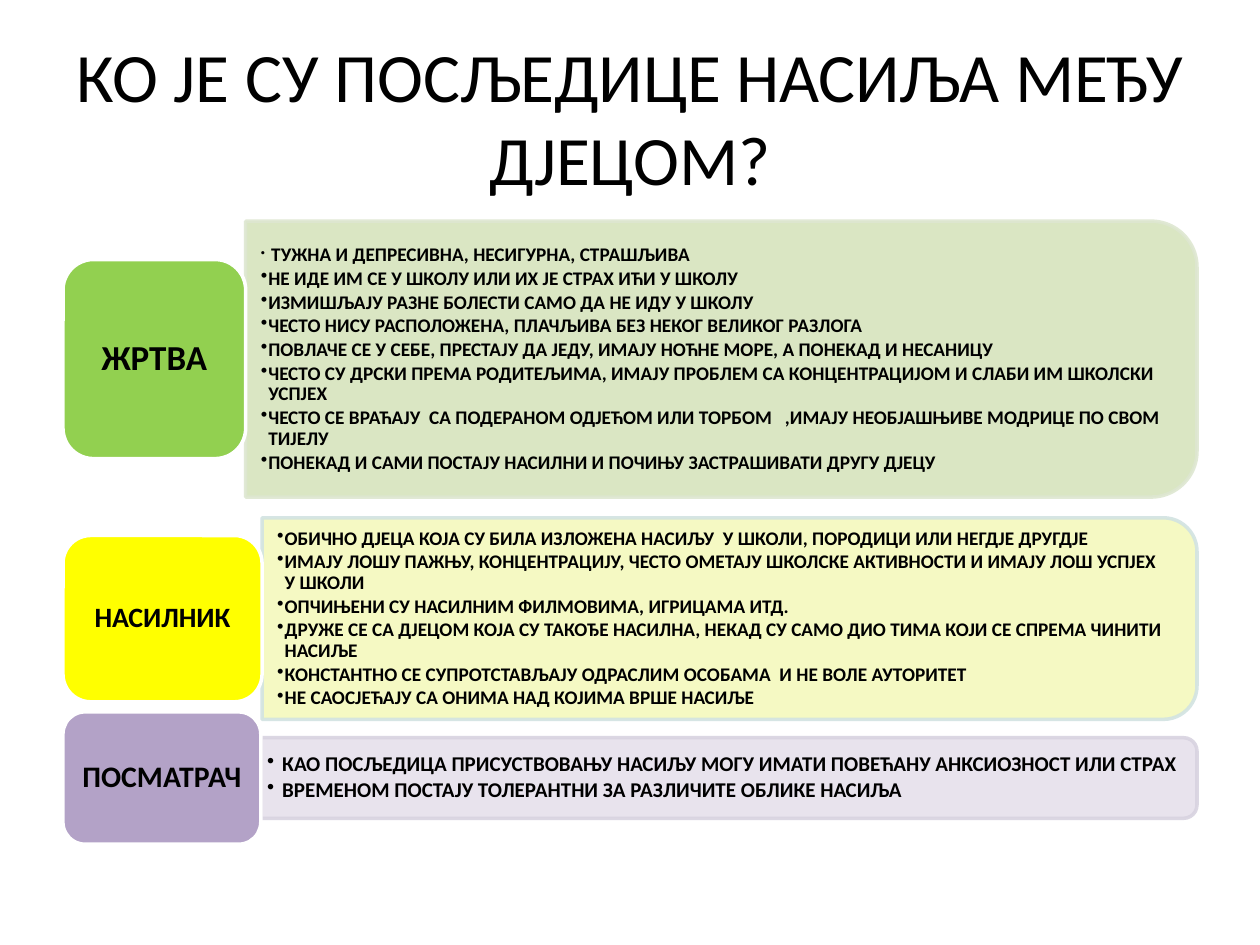
from dataclasses import dataclass
from typing import Optional

from lxml.etree import SubElement
from pptx import Presentation
from pptx.dml.color import RGBColor
from pptx.enum.shapes import MSO_SHAPE
from pptx.enum.text import MSO_ANCHOR, MSO_AUTO_SIZE, PP_ALIGN
from pptx.oxml.ns import qn
from pptx.util import Inches, Pt

COLUMNS, ROWS = 100, 75
CELL = Inches(0.1)
LABEL_LEFT = 5
PANEL_RIGHT = 95
OPACITY = 90
CORNER_SHARE = 1 / 6
CORNER_TEXT_SHARE = 0.29

COLORS = {
    "text": "000000",
    "label line": "FFFFFF",
    "victim label": "92D050",
    "victim panel": "D7E4BD",
    "victim line": "DEE7D1",
    "bully label": "FFFF00",
    "bully panel": "F5F9BD",
    "bully line": "D2E3E2",
    "observer label": "B3A2C7",
    "observer panel": "E6E0EC",
    "observer line": "D8D3E0",
}


@dataclass(frozen=True)
class Box:
    left: float
    top: float
    width: float
    height: float

    def lengths(self):
        return [round(cells * CELL) for cells in (self.left, self.top, self.width, self.height)]


@dataclass(frozen=True)
class Role:
    key: str
    name: str
    name_size: float
    label_top: float
    label_width: float
    label_height: float
    panel_height: float
    list_size: float
    hanging: float
    margin: float
    consequences: list[str]
    lead_size: Optional[float] = None


ROLES = [
    Role("victim", "ЖРТВА", 20, 20.6, 14.5, 15.8, 21.9, 11, 0.06, 0.12, [
        "ТУЖНА И ДЕПРЕСИВНА, НЕСИГУРНА, СТРАШЉИВА",
        "НЕ ИДЕ ИМ СЕ У ШКОЛУ ИЛИ ИХ ЈЕ СТРАХ ИЋИ У ШКОЛУ",
        "ИЗМИШЉАЈУ РАЗНЕ БОЛЕСТИ САМО ДА НЕ ИДУ У ШКОЛУ",
        "ЧЕСТО НИСУ РАСПОЛОЖЕНА, ПЛАЧЉИВА БЕЗ НЕКОГ ВЕЛИКОГ РАЗЛОГА",
        "ПОВЛАЧЕ СЕ У СЕБЕ, ПРЕСТАЈУ ДА ЈЕДУ, ИМАЈУ НОЋНЕ МОРЕ, А ПОНЕКАД И НЕСАНИЦУ",
        "ЧЕСТО СУ ДРСКИ ПРЕМА РОДИТЕЉИМА, ИМАЈУ ПРОБЛЕМ СА КОНЦЕНТРАЦИЈОМ И СЛАБИ ИМ ШКОЛСКИ УСПЈЕХ",
        "ЧЕСТО СЕ ВРАЋАЈУ  СА ПОДЕРАНОМ ОДЈЕЋОМ ИЛИ ТОРБОМ   ,ИМАЈУ НЕОБЈАШЊИВЕ МОДРИЦЕ ПО СВОМ ТИЈЕЛУ",
        "ПОНЕКАД И САМИ ПОСТАЈУ НАСИЛНИ И ПОЧИЊУ ЗАСТРАШИВАТИ ДРУГУ ДЈЕЦУ",
    ], lead_size=7),
    Role("bully", "НАСИЛНИК", 16, 42.5, 15.8, 13.2, 16, 11, 0.06, 0.12, [
        "ОБИЧНО ДЈЕЦА КОЈА СУ БИЛА ИЗЛОЖЕНА НАСИЉУ  У ШКОЛИ, ПОРОДИЦИ ИЛИ НЕГДЈЕ ДРУГДЈЕ",
        "ИМАЈУ ЛОШУ ПАЖЊУ, КОНЦЕНТРАЦИЈУ, ЧЕСТО ОМЕТАЈУ ШКОЛСКЕ АКТИВНОСТИ И ИМАЈУ ЛОШ УСПЈЕХ У ШКОЛИ",
        "ОПЧИЊЕНИ СУ НАСИЛНИМ ФИЛМОВИМА, ИГРИЦАМА ИТД.",
        "ДРУЖЕ СЕ СА ДЈЕЦОМ КОЈА СУ ТАКОЂЕ НАСИЛНА, НЕКАД СУ САМО ДИО ТИМА КОЈИ СЕ СПРЕМА ЧИНИТИ  НАСИЉЕ",
        "КОНСТАНТНО СЕ СУПРОТСТАВЉАЈУ ОДРАСЛИМ ОСОБАМА  И НЕ ВОЛЕ АУТОРИТЕТ",
        "НЕ САОСЈЕЋАЈУ СА ОНИМА НАД КОЈИМА ВРШЕ НАСИЉЕ",
    ]),
    Role("observer", "ПОСМАТРАЧ", 17, 56.5, 15.7, 10.5, 6.4, 12, 0.12, 0.05, [
        "КАО ПОСЉЕДИЦА ПРИСУСТВОВАЊУ НАСИЉУ МОГУ ИМАТИ ПОВЕЋАНУ АНКСИОЗНОСТ ИЛИ СТРАХ",
        "ВРЕМЕНОМ ПОСТАЈУ ТОЛЕРАНТНИ ЗА РАЗЛИЧИТЕ ОБЛИКЕ НАСИЉА",
    ]),
]


def add_run(paragraph, text: str, size: float, bold: bool) -> None:
    run = paragraph.add_run()
    run.text = text
    run.font.name = "Calibri"
    run.font.size = Pt(size)
    run.font.bold = bold
    run.font.color.rgb = RGBColor.from_string(COLORS["text"])


def write_text(shape, lines: list[str], *, size: float, bold: bool = True,
               align=PP_ALIGN.CENTER, margin: float = 0.07, line_spacing: float = 0.9,
               hanging: Optional[float] = None, lead_size: Optional[float] = None) -> None:
    frame = shape.text_frame
    frame.word_wrap = True
    frame.auto_size = MSO_AUTO_SIZE.NONE
    frame.vertical_anchor = MSO_ANCHOR.MIDDLE
    frame.margin_left = frame.margin_right = Inches(margin)
    frame.margin_top = frame.margin_bottom = Inches(margin / 2)
    for index, line in enumerate(lines):
        paragraph = frame.add_paragraph() if index else frame.paragraphs[0]
        paragraph.alignment = align
        paragraph.line_spacing = line_spacing
        if hanging is not None:
            paragraph.level = 1
            paragraph.space_after = Pt(0.15 * size)
            properties = paragraph._p.get_or_add_pPr()
            properties.set("marL", str(Inches(hanging)))
            properties.set("indent", str(-Inches(hanging)))
            SubElement(properties, qn("a:buChar"), char="•")
        if lead_size and index == 0:
            add_run(paragraph, " ", lead_size, False)
        add_run(paragraph, line, size, bold)


def add_block(slide, kind, box: Box, fill: str, line: str, opacity: int = 100):
    shape = slide.shapes.add_shape(kind, *box.lengths())
    shape.shadow.inherit = False
    shape.fill.solid()
    shape.fill.fore_color.rgb = RGBColor.from_string(COLORS[fill])
    shape.line.color.rgb = RGBColor.from_string(COLORS[line])
    shape.line.width = Pt(2)
    if opacity < 100:
        for color in shape._element.spPr.iter(qn("a:srgbClr")):
            SubElement(color, qn("a:alpha"), val=str(opacity * 1000))
    return shape


def add_role(slide, role: Role) -> None:
    label = Box(LABEL_LEFT, role.label_top, role.label_width, role.label_height)
    left = label.left + label.width
    width, height = PANEL_RIGHT - left, role.panel_height
    middle_x, middle_y = left + width / 2, label.top + label.height / 2

    upright = Box(middle_x - height / 2, middle_y - width / 2, height, width)
    panel = add_block(slide, MSO_SHAPE.ROUND_2_SAME_RECTANGLE, upright,
                      f"{role.key} panel", f"{role.key} line", OPACITY)
    panel.rotation = 90

    inset = CORNER_TEXT_SHARE * CORNER_SHARE * height
    list_box = Box(left, middle_y - height / 2 + inset, width - inset, height - 2 * inset)
    write_text(slide.shapes.add_textbox(*list_box.lengths()), role.consequences,
               size=role.list_size, align=PP_ALIGN.LEFT, margin=role.margin,
               hanging=role.hanging, lead_size=role.lead_size)

    name = add_block(slide, MSO_SHAPE.ROUNDED_RECTANGLE, label, f"{role.key} label", "label line")
    write_text(name, [role.name], size=role.name_size)


def main() -> None:
    presentation = Presentation()
    presentation.slide_width = COLUMNS * CELL
    presentation.slide_height = ROWS * CELL
    slide = presentation.slides.add_slide(presentation.slide_layouts[5])
    title = slide.shapes.title
    title.left, title.top, title.width, title.height = Box(5, 3, 90, 12.5).lengths()
    write_text(title, ["КО ЈЕ СУ ПОСЉЕДИЦЕ НАСИЉА МЕЂУ ДЈЕЦОМ?"],
               size=39.6, bold=False, margin=0.1, line_spacing=1.0)
    for role in ROLES:
        add_role(slide, role)
    presentation.save("out.pptx")


if __name__ == "__main__":
    main()
